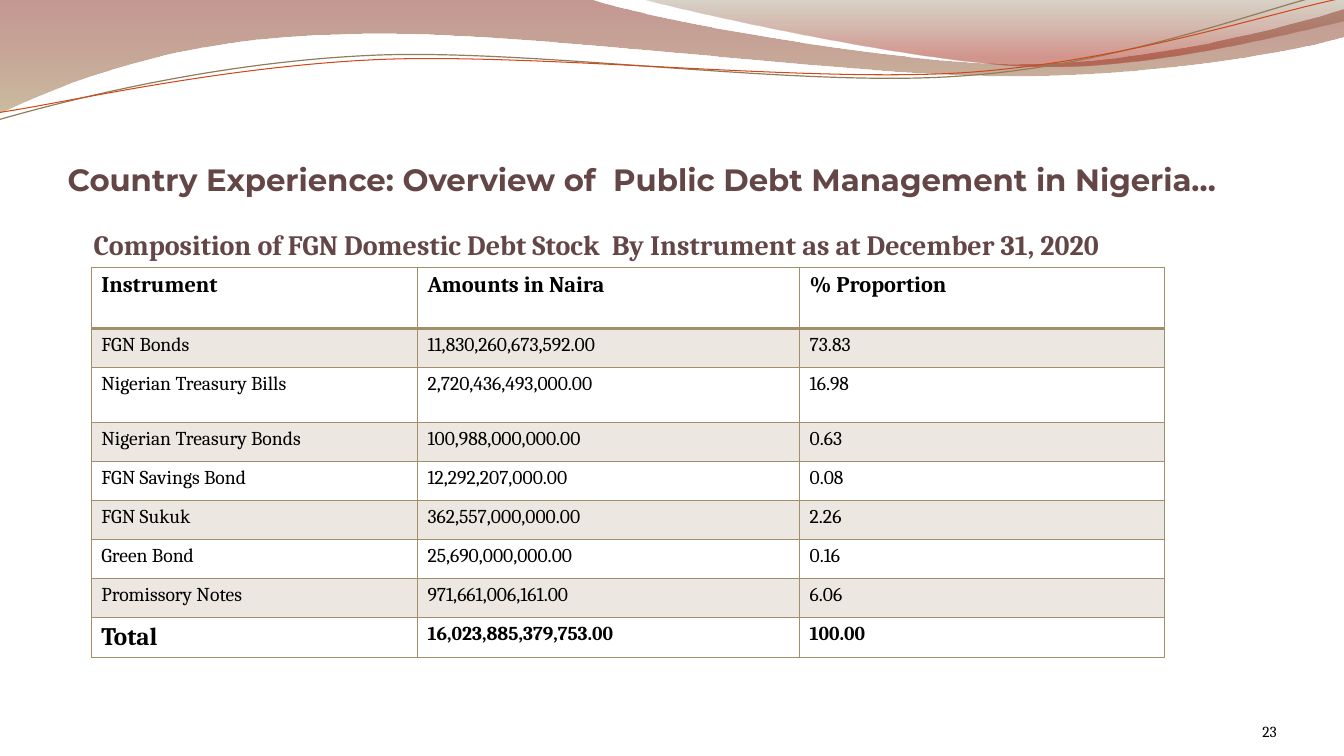
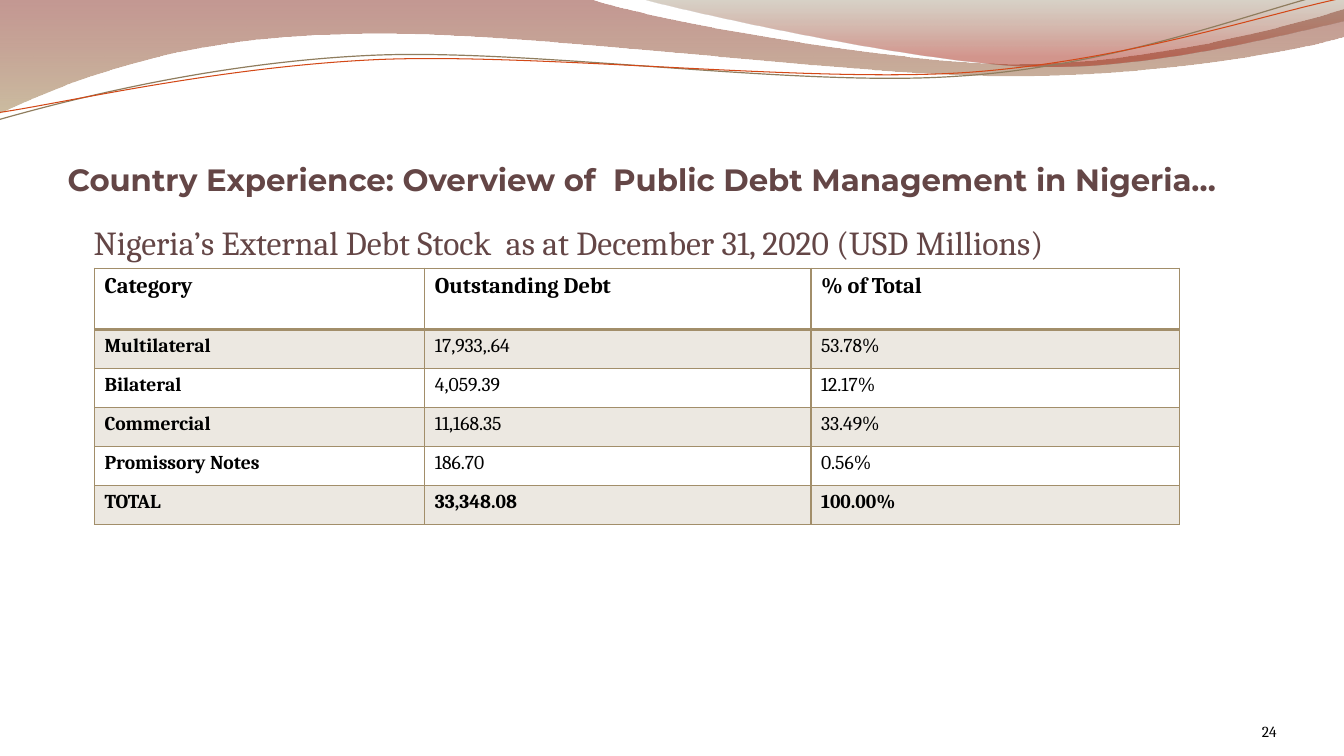
from dataclasses import dataclass

from lxml.etree import SubElement
from pptx import Presentation
from pptx.dml.color import RGBColor
from pptx.enum.text import MSO_ANCHOR, PP_ALIGN
from pptx.oxml.ns import qn
from pptx.util import Pt


@dataclass(frozen=True)
class Theme:
    ink: str = "000000"
    plum: str = "644646"
    tan: str = "A28E6A"
    olive: str = "8F7D5E"
    rust: str = "D34817"
    # Gradient stops: position, colour, opacity in percent
    wave: tuple = ((0, "7C1A0E", 45), (1, "A18552", 55))
    bay: tuple = ((0, "7E6B48", 30), (0.8, "9F1705", 45))
    band: int = 20
    head: str = "Montserrat"
    body: str = "Cambria"
    title: int = 22
    label: int = 16
    cell: int = 14
    page: int = 11


T = Theme()

TITLE = "Country Experience: Overview of  Public Debt Management in Nigeria…"

# Outlines in points: a pair is a line's end, six numbers are a Bézier curve
WAVE = [(0, 0), (423, -0.2), (456, 12, 636, 45.5, 728, 45.5),
        (819, 45.5, 919, 19, 960, 6.5), (960, 26),
        (944, 32, 834, 55, 716, 54), (597, 54, 366, 20, 247, 24.5),
        (124, 26, 44, 60, -1, 81), (0, 0)]
BAY = [(459, -0.2), (489, 8, 654, 44.5, 738, 47),
       (821, 49.5, 923, 23, 960, 15), (960, 0), (459, -0.2)]
# The strands are drawn level and then tilted
TILT = 357.3
HIGH = [(-2.6, 62.9), (44, 52, 151.2, 29.1, 266.3, 29.5),
        (379.4, 29.8, 566.9, 66.7, 682.2, 64.1),
        (798.4, 62.6, 902.2, 25.9, 959.8, 15.6)]
LOW = [(-2.3, 57.8), (43.5, 53.4, 157.1, 32.3, 271.7, 32.7),
       (386.8, 33.6, 572.1, 63.4, 686.8, 61.8),
       (801.5, 59.7, 904.6, 30, 961.6, 21.1)]

LOCAL = [
    ("Instrument", "Amounts in Naira", "% Proportion"),
    ("FGN Bonds", "11,830,260,673,592.00", "73.83"),
    ("Nigerian Treasury Bills", "2,720,436,493,000.00", "16.98"),
    ("Nigerian Treasury Bonds", "100,988,000,000.00", "0.63"),
    ("FGN Savings Bond", "12,292,207,000.00", "0.08"),
    ("FGN Sukuk", "362,557,000,000.00", "2.26"),
    ("Green Bond", "25,690,000,000.00", "0.16"),
    ("Promissory Notes", "971,661,006,161.00", "6.06"),
    ("Total", "16,023,885,379,753.00", "100.00"),
]
ABROAD = [
    ("Category", "Outstanding Debt", "% of Total"),
    ("Multilateral", "17,933,.64", "53.78%"),
    ("Bilateral", "4,059.39", "12.17%"),
    ("Commercial", "11,168.35", "33.49%"),
    ("Promissory Notes", "186.70", "0.56%"),
    ("TOTAL", "33,348.08", "100.00%"),
]


def rgb(tone):
    return RGBColor.from_string(tone)


def fade(node, *alphas):
    """Give the colours under node their opacity, in percent."""
    for tone, alpha in zip(node.iter(qn("a:srgbClr")), alphas):
        SubElement(tone, qn("a:alpha"), val=str(alpha * 1000))


def style(para, size, tone, bold=False, face=T.body):
    font = para.font
    font.name, font.size, font.bold = face, Pt(size), bold
    font.color.rgb = rgb(tone)


def trace(slide, route, close):
    """Draw a route through all its points, then bend its curved legs."""
    dots = [(Pt(leg[i]), Pt(leg[i + 1]))
            for leg in route for i in range(0, len(leg), 2)]
    pen = slide.shapes.build_freeform(*dots[0])
    pen.add_line_segments(dots[1:], close=close)
    shape = pen.convert_to_shape()
    shape.shadow.inherit = False
    lines = iter(list(shape._element.iter(qn("a:lnTo"))))
    for leg in route[1:]:
        first = next(lines)
        if len(leg) == 6:
            first.tag = qn("a:cubicBezTo")
            for _ in range(2):
                line = next(lines)
                first.append(line[0])
                line.getparent().remove(line)
    return shape


def bend(shape):
    """Rewrite tagged legs so that they are read as curves."""
    return shape


def sweep(slide, route, stops):
    """Draw a closed outline with a fading fill from top to bottom."""
    shape = trace(slide, route, True)
    shape.line.fill.background()
    shape.fill.gradient()
    shape.fill.gradient_angle = 270
    for stop, (place, tone, _) in zip(shape.fill.gradient_stops, stops):
        stop.position = place
        stop.color.rgb = rgb(tone)
    fade(shape._element.spPr, *(alpha for _, _, alpha in stops))


def strand(slide, route, tone, width):
    shape = trace(slide, route, False)
    shape.rotation = TILT
    shape.fill.background()
    shape.line.color.rgb = rgb(tone)
    shape.line.width = Pt(width)


def write(slide, box, text, size, tone, align=PP_ALIGN.LEFT,
          anchor=MSO_ANCHOR.BOTTOM, left=0, top=0, **look):
    frame = slide.shapes.add_textbox(*map(Pt, box)).text_frame
    frame.word_wrap = True
    frame.vertical_anchor = anchor
    frame.margin_left, frame.margin_top = Pt(left), Pt(top)
    frame.margin_right = frame.margin_bottom = 0
    para = frame.paragraphs[0]
    para.text, para.alignment = text, align
    style(para, size, tone, **look)


def edge(cell, row):
    """Rule all four sides, with a heavier line below the header."""
    thick = {"T": 2 if row == 1 else 1, "B": 2 if row == 0 else 1}
    for side in "LRTB":
        line = SubElement(cell._tc.get_or_add_tcPr(), qn("a:ln" + side),
                          w=str(Pt(thick.get(side, 1))))
        fill = SubElement(line, qn("a:solidFill"))
        SubElement(fill, qn("a:srgbClr"), val=T.tan)


def shade(cell, row):
    if row % 2:
        cell.fill.solid()
        cell.fill.fore_color.rgb = rgb(T.tan)
        fade(cell._tc.tcPr.find(qn("a:solidFill")), T.band)
    else:
        cell.fill.background()


def grid(slide, left, top, widths, rows, tall=None, keys=False, total=T.cell):
    """Add a table; tall maps rows to heights, keys makes column one bold."""
    highs = [27.85] * len(rows)
    for row, high in {0: 44, **(tall or {})}.items():
        highs[row] = high
    box = map(Pt, (left, top, sum(widths), sum(highs)))
    table = slide.shapes.add_table(len(rows), len(widths), *box).table
    table.first_row = table.horz_banding = False
    for col, width in zip(table.columns, widths):
        col.width = Pt(width)
    last = len(rows) - 1
    for r, texts in enumerate(rows):
        table.rows[r].height = Pt(highs[r])
        for c, text in enumerate(texts):
            cell = table.cell(r, c)
            edge(cell, r)
            shade(cell, r)
            size = T.label if r == 0 else T.cell
            if r == last and c == 0:
                size = total
            para = cell.text_frame.paragraphs[0]
            para.text = text
            style(para, size, T.ink, r in (0, last) or keys and c == 0)


def base(deck, page):
    """Add a slide with the waves, title and page number all slides share."""
    slide = deck.slides.add_slide(deck.slide_layouts[6])
    sweep(slide, WAVE, T.wave)
    sweep(slide, BAY, T.bay)
    strand(slide, HIGH, T.olive, 0.85)
    strand(slide, LOW, T.rust, 0.75)
    write(slide, (48.3, 51, 864, 90), TITLE, T.title, T.plum,
          bold=True, face=T.head)
    write(slide, (832, 500, 80, 29), str(page), T.page, T.ink,
          PP_ALIGN.RIGHT)
    return slide


def topic(slide, text, size, bold=False):
    """Head the table, on the same baseline for every type size."""
    write(slide, (48, 152, 864, 345), text, size, T.plum, bold=bold,
          anchor=MSO_ANCHOR.TOP, left=19, top=29.2 - 0.95 * size)


def main():
    deck = Presentation()
    deck.slide_width, deck.slide_height = Pt(960), Pt(540)

    slide = base(deck, 23)
    topic(slide, "Composition of FGN Domestic Debt Stock  By Instrument"
          " as at December 31, 2020", 20, True)
    grid(slide, 65.2, 190.8, (233, 273, 260.7), LOCAL,
         tall={2: 39.3}, total=18)

    slide = base(deck, 24)
    topic(slide, "Nigeria’s External Debt Stock  as at December 31, 2020"
          " (USD Millions)", 24)
    grid(slide, 67.5, 191.5, (236, 275.8, 263.5), ABROAD, keys=True)

    deck.save("out.pptx")


if __name__ == "__main__":
    main()
